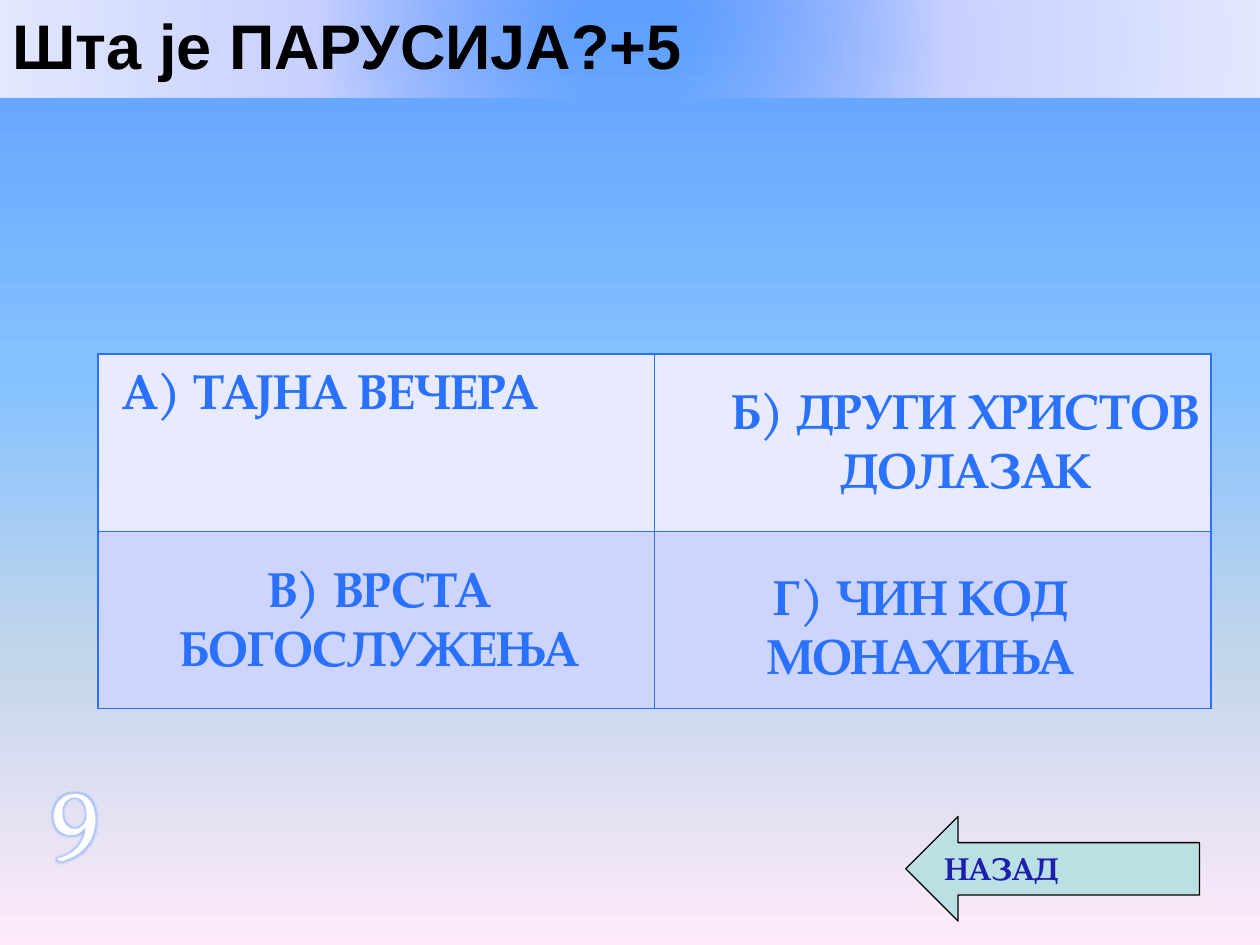
from lxml import etree
from pptx import Presentation
from pptx import util as u
from pptx.dml.color import RGBColor
from pptx.enum import shapes, text
from pptx.oxml.ns import nsdecls, qn

BLACK = RGBColor(0x00, 0x00, 0x00)
WHITE = RGBColor(0xFF, 0xFF, 0xFF)
NAVY = RGBColor(0x1F, 0x1F, 0xAD)
OUTLINE_BLUE = RGBColor(0x10, 0x4E, 0xCC)
GRID_BLUE = RGBColor(0x2B, 0x71, 0xFF)
HALO = RGBColor(0x8C, 0xB4, 0xFF)
ARROW_TEAL = RGBColor(0xBB, 0xE0, 0xE3)
ROW_FILLS = [RGBColor(0xE8, 0xEB, 0xFF), RGBColor(0xCD, 0xD5, 0xFF)]

LINEAR = '<a:lin ang="5400000" scaled="0"/>'
RADIAL = ('<a:path path="circle"><a:fillToRect l="50000" t="50000" '
          'r="50000" b="50000"/></a:path>')
SKY = [(0, "5E9EFF", 100), (40, "85C2FF", 100), (70, "C4D6EB", 100), (100, "FFEBFA", 100)]
BAND = [(9, "A2B3FF", 0), (50, "C7D0FF", 100), (100, "E3E8FF", 100)]
LETTERS = [(0, "003194", 100), (43, "2B71FF", 100), (48, "1763FF", 100), (100, "003194", 100)]

SERIF = "TeX Gyre Pagella"
TITLE_FONT = {"name": "Arial", "size": u.Pt(36), "bold": True}
NUMBER_FONT = {"name": SERIF, "size": u.Pt(54)}
BACK_FONT = {"name": SERIF, "size": u.Pt(18), "bold": True}
ANSWER_FONT = {"name": SERIF, "size": u.Pt(28), "bold": True}


def drawing(tag, content, attributes=""):
    return etree.fromstring(f'<a:{tag} {nsdecls("a")} {attributes}>{content}</a:{tag}>')


def set_all(target, values):
    for name, value in values.items():
        setattr(target, name, value)


def swap_gradient(solid, stops, shade):
    """Replace a solidFill element with a gradient."""
    marks = "".join(
        f'<a:gs pos="{pos * 1000}"><a:srgbClr val="{color}">'
        f'<a:alpha val="{opacity * 1000}"/></a:srgbClr></a:gs>'
        for pos, color, opacity in stops)
    solid.getparent().replace(
        solid, drawing("gradFill", f"<a:gsLst>{marks}</a:gsLst>{shade}", 'rotWithShape="1"'))


def solid_line(tag, color, points):
    return drawing(tag, f'<a:solidFill><a:srgbClr val="{color}"/></a:solidFill>',
                   f'w="{u.Pt(points)}"')


class QuizSlide:
    def __init__(self, presentation):
        self.slide = presentation.slides.add_slide(presentation.slide_layouts[5])
        self.slide.background.fill.solid()
        swap_gradient(self.slide.element.xpath(".//p:bgPr/a:solidFill")[0], SKY, LINEAR)

    def add_words(self, frame, words, font, color, align, outline=None):
        """Add one styled run and return its properties element."""
        paragraph = frame.paragraphs[0]
        paragraph.alignment = align
        run = paragraph.add_run()
        run.text = words
        set_all(run.font, font)
        run.font.fill.solid()
        run.font.fill.fore_color.rgb = color
        properties = run._r.get_or_add_rPr()
        if outline:
            properties.insert(0, solid_line("ln", *outline))
        return properties

    def title(self, words, width, height):
        band = self.slide.shapes.title
        set_all(band, {"left": 0, "top": 0, "width": width, "height": height})
        band.fill.solid()
        swap_gradient(band.element.spPr.find(qn("a:solidFill")), BAND, RADIAL)
        set_all(band.text_frame, {"vertical_anchor": text.MSO_ANCHOR.MIDDLE, "word_wrap": True,
                                  "auto_size": text.MSO_AUTO_SIZE.SHAPE_TO_FIT_TEXT})
        self.add_words(band.text_frame, words, TITLE_FONT, BLACK, text.PP_ALIGN.LEFT)

    def label(self, words, box, font, color, outline, wrap=True):
        frame = self.slide.shapes.add_textbox(*map(u.Cm, box)).text_frame
        set_all(frame, {"word_wrap": wrap,
                        "auto_size": text.MSO_AUTO_SIZE.SHAPE_TO_FIT_TEXT})
        return self.add_words(frame, words, font, color, text.PP_ALIGN.CENTER, outline)

    def number(self, words, box):
        properties = self.label(words, box, NUMBER_FONT, WHITE, (WHITE, 1.45), wrap=False)
        glow = (f'<a:glow rad="{u.Pt(4)}"><a:srgbClr val="{HALO}">'
                '<a:alpha val="60000"/></a:srgbClr></a:glow>')
        properties.find(qn("a:solidFill")).addnext(drawing("effectLst", glow))

    def answer(self, words, box):
        properties = self.label(words, box, ANSWER_FONT, GRID_BLUE, (OUTLINE_BLUE, 0.71))
        swap_gradient(properties.find(qn("a:solidFill")), LETTERS, LINEAR)

    def back_arrow(self, words, box):
        arrow = self.slide.shapes.add_shape(shapes.MSO_SHAPE.LEFT_ARROW, *map(u.Cm, box))
        arrow.shadow.inherit = False
        arrow.fill.solid()
        arrow.fill.fore_color.rgb = ARROW_TEAL
        arrow.line.color.rgb = BLACK
        arrow.line.width = u.Pt(0.75)
        arrow.text_frame.vertical_anchor = text.MSO_ANCHOR.TOP
        self.add_words(arrow.text_frame, words, BACK_FONT, NAVY, text.PP_ALIGN.LEFT,
                       (NAVY, 1.42))

    def answer_grid(self, box):
        grid = self.slide.shapes.add_table(2, 2, *map(u.Cm, box)).table
        set_all(grid, {"first_row": False, "horz_banding": False})
        for row, color in zip(grid.rows, ROW_FILLS):
            for cell in row.cells:
                cell.fill.solid()
                cell.fill.fore_color.rgb = color
                properties = cell._tc.get_or_add_tcPr()
                for position, side in enumerate(("lnL", "lnR", "lnT", "lnB")):
                    properties.insert(position, solid_line(side, GRID_BLUE, 1))


def main():
    presentation = Presentation()
    set_all(presentation, {"slide_width": u.Cm(25.4), "slide_height": u.Cm(19.05)})
    quiz = QuizSlide(presentation)
    quiz.title("Шта је ПАРУСИЈА?+5", presentation.slide_width, u.Cm(1.8))
    quiz.number("9", (0.79, 15.29, 1.47, 2.57))
    quiz.back_arrow("НАЗАД", (18.26, 16.46, 5.92, 2.11))
    quiz.answer_grid((1.98, 7.14, 22.43, 7.14))
    for words, box in (
        ("А) ТАЈНА ВЕЧЕРА", (1.78, 7.14, 9.73, 1.45)),
        ("Б) ДРУГИ ХРИСТОВ ДОЛАЗАК", (14.1, 7.54, 10.72, 2.64)),
        ("В) ВРСТА БОГОСЛУЖЕЊА", (2.77, 11.13, 9.73, 2.64)),
        ("Г) ЧИН КОД МОНАХИЊА", (13.69, 11.3, 9.73, 2.64)),
    ):
        quiz.answer(words, box)
    presentation.save("out.pptx")


if __name__ == "__main__":
    main()
